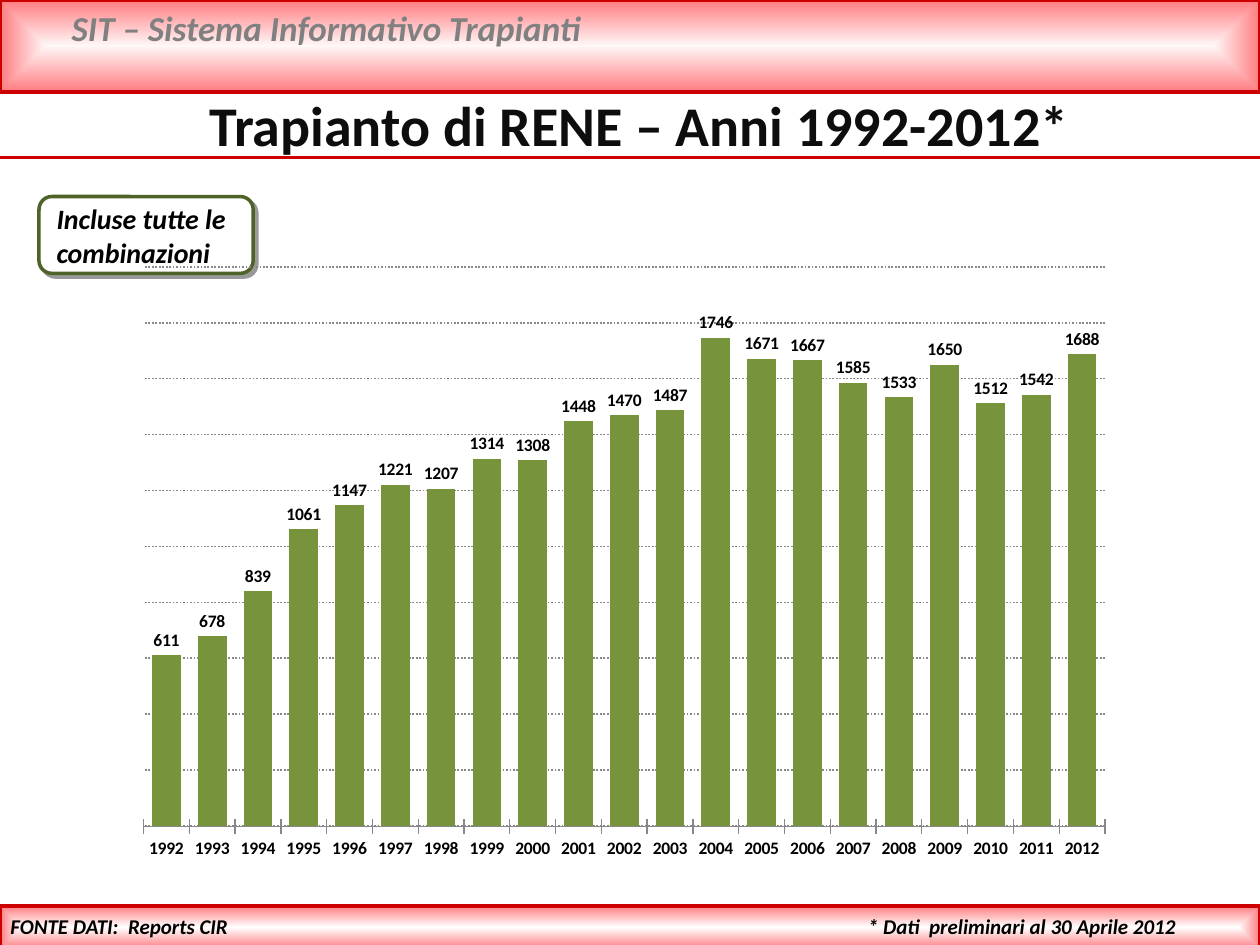
"""Build a slide with a column chart of kidney transplants per year."""
from dataclasses import dataclass

from lxml import etree
from pptx import Presentation
from pptx.chart.data import CategoryChartData
from pptx.dml.color import RGBColor
from pptx.enum.chart import XL_CHART_TYPE, XL_LABEL_POSITION, XL_TICK_LABEL_POSITION, XL_TICK_MARK
from pptx.enum.dml import MSO_LINE
from pptx.enum.shapes import MSO_CONNECTOR, MSO_SHAPE
from pptx.enum.text import MSO_ANCHOR, PP_ALIGN
from pptx.oxml import parse_xml
from pptx.oxml.ns import nsdecls, qn
from pptx.util import Inches, Pt

COLUMN = XL_CHART_TYPE.COLUMN_CLUSTERED
OUTSIDE = XL_LABEL_POSITION.OUTSIDE_END
LOW = XL_TICK_LABEL_POSITION.LOW
CROSS, NO_TICK = XL_TICK_MARK.CROSS, XL_TICK_MARK.NONE
DOTS = MSO_LINE.ROUND_DOT
STRAIGHT = MSO_CONNECTOR.STRAIGHT
RECT, ROUND = MSO_SHAPE.RECTANGLE, MSO_SHAPE.ROUNDED_RECTANGLE
TOP = MSO_ANCHOR.TOP
LEFT, CENTER, RIGHT = PP_ALIGN.LEFT, PP_ALIGN.CENTER, PP_ALIGN.RIGHT

FONT = "Calibri"
BLACK = RGBColor(0, 0, 0)
INK = RGBColor(0x0D, 0x0D, 0x0D)
GRAY = RGBColor(0x80, 0x80, 0x80)
GRID = RGBColor(0x88, 0x88, 0x88)
WHITE = RGBColor(0xFF, 0xFF, 0xFF)
BLUSH = RGBColor(0xFF, 0xF6, 0xF6)
PINK = RGBColor(0xFF, 0x7C, 0x80)
RED = RGBColor(0xCC, 0, 0)
GREEN = RGBColor(0x77, 0x93, 0x3C)
MOSS = RGBColor(0x4F, 0x62, 0x28)

START = 1992
COUNTS = (611, 678, 839, 1061, 1147, 1221, 1207, 1314, 1308, 1448, 1470,
          1487, 1746, 1671, 1667, 1585, 1533, 1650, 1512, 1542, 1688)


@dataclass
class Band:
    top: float
    height: float
    core: RGBColor


@dataclass
class Label:
    text: str
    left: float
    top: float
    width: float
    height: float
    size: int
    color: RGBColor = BLACK
    align: PP_ALIGN = LEFT
    wrap: bool = True


BANDS = (Band(0, 0.73, BLUSH), Band(7.19, 0.34, WHITE))
TITLE = Label("Trapianto di RENE – Anni 1992-2012*", 1.09, 0.67, 7.97, 0.64, 32, INK, CENTER)
LABELS = (
    Label("SIT – Sistema Informativo Trapianti", 0.47, 0, 8.98, 0.44, 20, GRAY),
    Label("FONTE DATI:  Reports CIR", -0.04, 7.2, 1.95, 0.3, 12, align=RIGHT, wrap=False),
    Label("Incluse tutte le combinazioni", 0.35, 1.55, 1.65, 0.64, 16),
    Label("* Dati  preliminari al 30 Aprile 2012", 6.79, 7.2, 3.21, 0.3, 12),
)


def add_band(slide, band: Band) -> None:
    shape = slide.shapes.add_shape(RECT, 0, Inches(band.top), Inches(10), Inches(band.height))
    shape.shadow.inherit = False
    shape.line.color.rgb = RED
    shape.line.width = Pt(2)
    shape.fill.gradient()
    grad = shape._element.spPr.find(qn("a:gradFill"))
    grad.getparent().replace(grad, parse_xml(
        f'<a:gradFill {nsdecls("a")} rotWithShape="1"><a:gsLst>'
        f'<a:gs pos="0"><a:srgbClr val="{band.core}"/></a:gs>'
        f'<a:gs pos="100000"><a:srgbClr val="{PINK}"/></a:gs></a:gsLst>'
        '<a:path path="shape"><a:fillToRect l="50000" t="50000" r="50000" b="50000"/>'
        '</a:path></a:gradFill>'))


def add_rule(slide) -> None:
    rule = slide.shapes.add_connector(STRAIGHT, 0, Inches(1.25), Inches(10), Inches(1.25))
    rule.line.color.rgb = RED
    rule.line.width = Pt(2)
    etree.SubElement(rule._element.spPr, qn("a:effectLst"))


def add_frame(slide) -> None:
    frame = slide.shapes.add_shape(ROUND, Inches(0.31), Inches(1.56), Inches(1.7), Inches(0.61))
    frame.adjustments[0] = 0.167
    frame.fill.solid()
    frame.fill.fore_color.rgb = WHITE
    frame.line.color.rgb = MOSS
    frame.line.width = Pt(2)
    frame.shadow.inherit = False
    frame._element.spPr.find(qn("a:effectLst")).append(parse_xml(
        f'<a:outerShdw {nsdecls("a")} dist="{Pt(3)}" dir="2700000" algn="tl" rotWithShape="0">'
        f'<a:srgbClr val="{BLACK}"><a:alpha val="40000"/></a:srgbClr></a:outerShdw>'))


def set_label(shape, label: Label, italic: bool) -> None:
    shape.left, shape.top = Inches(label.left), Inches(label.top)
    shape.width, shape.height = Inches(label.width), Inches(label.height)
    frame = shape.text_frame
    frame.text = label.text
    frame.word_wrap = label.wrap
    frame.vertical_anchor = TOP
    para = frame.paragraphs[0]
    para.alignment = label.align
    font = para.runs[0].font
    font.name, font.size = FONT, Pt(label.size)
    font.bold, font.italic = True, italic
    font.color.rgb = label.color


def add_label(slide, label: Label) -> None:
    set_label(slide.shapes.add_textbox(0, 0, 0, 0), label, True)


def set_font(font) -> None:
    font.name, font.size, font.bold = FONT, Pt(10), True
    font.color.rgb = BLACK


def add_counts(slide) -> None:
    data = CategoryChartData()
    data.categories = [str(START + i) for i in range(len(COUNTS))]
    data.add_series("Series 1", COUNTS)
    chart = slide.shapes.add_chart(
        COLUMN, Inches(0.98), Inches(2.02), Inches(7.95), Inches(4.88), data).chart
    chart.has_legend = chart.has_title = False
    set_font(chart.font)

    years = chart.category_axis
    years.major_tick_mark = CROSS
    years.tick_label_position = LOW
    years.format.line.color.rgb = GRID
    set_font(years.tick_labels.font)

    scale = chart.value_axis
    scale.minimum_scale, scale.maximum_scale, scale.major_unit = 0, 2000, 200
    scale.major_tick_mark = NO_TICK
    scale.visible = False
    scale.has_major_gridlines = True
    grid = scale.major_gridlines.format.line
    grid.color.rgb = GRID
    grid.width = Pt(1)
    grid.dash_style = DOTS

    plot = chart.plots[0]
    plot.gap_width, plot.overlap = 60, -20
    plot.vary_by_categories = False
    bars = plot.series[0]
    bars.format.fill.solid()
    bars.format.fill.fore_color.rgb = GREEN
    tags = bars.data_labels
    tags.show_value = True
    tags.position = OUTSIDE
    set_font(tags.font)

    area = chart._chartSpace.chart.plotArea
    for old in area.findall(qn("c:layout")):
        area.remove(old)
    area.insert(0, parse_xml(
        f'<c:layout {nsdecls("c")}><c:manualLayout><c:layoutTarget val="inner"/>'
        '<c:xMode val="edge"/><c:yMode val="edge"/><c:x val="0.02"/><c:y val="0.02"/>'
        '<c:w val="0.96"/><c:h val="0.91"/></c:manualLayout></c:layout>'))


def main() -> None:
    deck = Presentation()
    deck.slide_width, deck.slide_height = Inches(10), Inches(7.5)
    slide = deck.slides.add_slide(deck.slide_layouts[5])
    for band in BANDS:
        add_band(slide, band)
    add_rule(slide)
    set_label(slide.shapes.title, TITLE, False)
    add_frame(slide)
    for label in LABELS:
        add_label(slide, label)
    add_counts(slide)
    deck.save("out.pptx")


if __name__ == "__main__":
    main()
